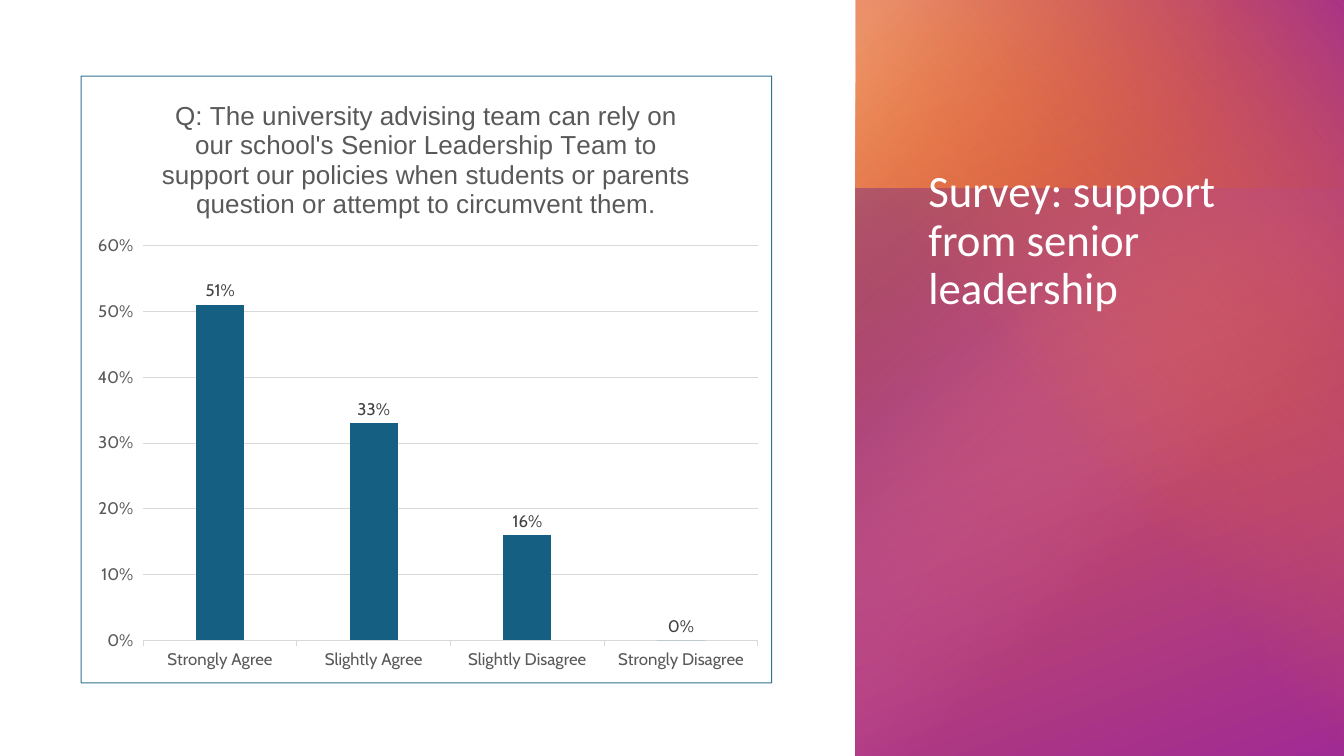
from dataclasses import dataclass

from lxml.etree import SubElement
from pptx import Presentation
from pptx.chart.data import CategoryChartData
from pptx.dml.color import RGBColor
from pptx.enum.chart import XL_CHART_TYPE as ChartType
from pptx.enum.chart import XL_LABEL_POSITION as LabelPosition
from pptx.enum.chart import XL_TICK_MARK as TickMark
from pptx.enum.shapes import MSO_SHAPE as Shape
from pptx.oxml import parse_xml
from pptx.oxml.ns import nsdecls, qn
from pptx.util import Inches, Pt


@dataclass(frozen=True)
class Theme:
    heading_font: str = "Calibri"
    question_font: str = "Arial"
    chart_font: str = "Cabin"
    heading_size: float = 32
    question_size: float = 18.6
    label_size: float = 12
    hairline: float = 0.75
    white: str = "FFFFFF"
    bar: str = "156082"
    grid: str = "D9D9D9"
    axis_text: str = "595959"
    value_text: str = "404040"
    orange: str = "E97132"
    peach: str = "F2AA84"
    purple: str = "A02B93"
    plum: str = "78206E"
    pink: str = "D86ECC"


def style_font(font, size, name, color):
    font.size, font.name, font.bold = Pt(size), name, False
    font.color.rgb = RGBColor.from_string(color)


def style_line(line, color, width):
    line.color.rgb = RGBColor.from_string(color)
    line.width = Pt(width)


def write(frame, text, *, size, font, color, spacing=None):
    paragraph = frame.paragraphs[0]
    paragraph.line_spacing = spacing
    run = paragraph.add_run()
    run.text = text
    style_font(run.font, size, font, color)


def gradient_xml(stops, angle):
    """Stops are (position, colour, opacity) in percent; no angle means radial."""
    marks = "".join(
        f'<a:gs pos="{position * 1000}"><a:srgbClr val="{color}">'
        f'<a:alpha val="{opacity * 1000}"/></a:srgbClr></a:gs>'
        for position, color, opacity in stops)
    if angle is None:
        course = ('<a:path path="circle"><a:fillToRect r="100000" b="100000"/>'
                  '</a:path>')
    else:
        course = f'<a:lin ang="{angle * 60000}" scaled="0"/>'
    return parse_xml(f'<a:gradFill {nsdecls("a")} rotWithShape="1">'
                     f'<a:gsLst>{marks}</a:gsLst>{course}</a:gradFill>')


class SurveySlide:
    """Places elements by boxes in percent of the slide's size."""

    def __init__(self, deck, theme):
        self.deck, self.theme = deck, theme
        self.slide = deck.slides.add_slide(deck.slide_layouts[6])

    def box(self, left, top, width, height):
        across, down = self.deck.slide_width / 100, self.deck.slide_height / 100
        return [round(share * unit) for share, unit in
                zip((left, top, width, height), (across, down, across, down))]

    def gradient(self, area, stops, angle=None, rotation=0):
        """Fill the visible area, swapping the sides for quarter turns."""
        left, top, width, height = self.box(*area)
        if rotation % 180 == 90:
            shift = (width - height) // 2
            left, top, width, height = left + shift, top - shift, height, width
        layer = self.slide.shapes.add_shape(Shape.RECTANGLE, left, top, width, height)
        layer.rotation = rotation
        layer.shadow.inherit = False
        layer.line.fill.background()
        layer.fill.background()
        properties = layer._element.spPr
        properties.replace(properties.find(qn("a:noFill")),
                           gradient_xml(stops, angle))

    def heading(self, area, text):
        theme = self.theme
        frame = self.slide.shapes.add_textbox(*self.box(*area)).text_frame
        frame.word_wrap = True
        write(frame, text, size=theme.heading_size, font=theme.heading_font,
              color=theme.white, spacing=0.9)

    def answers_chart(self, area, question, answers):
        theme = self.theme
        data = CategoryChartData(number_format="0%")
        data.categories = answers.keys()
        data.add_series("Series 1", answers.values())
        chart = self.slide.shapes.add_chart(
            ChartType.COLUMN_CLUSTERED, *self.box(*area), data).chart
        style_font(chart.font, theme.label_size, theme.chart_font, theme.axis_text)
        chart.has_legend = False
        chart.has_title = True
        write(chart.chart_title.text_frame, question, size=theme.question_size,
              font=theme.question_font, color=theme.axis_text)
        chart.chart_title.include_in_layout = False
        self.style_axes(chart)
        self.style_bars(chart.plots[0])
        self.place_plot(chart, x=0.09, y=0.28, w=0.89, h=0.65)
        self.frame_chart(chart)

    def style_axes(self, chart):
        theme = self.theme
        categories, shares = chart.category_axis, chart.value_axis
        for axis in (categories, shares):
            style_font(axis.tick_labels.font, theme.label_size,
                       theme.chart_font, theme.axis_text)
            axis.major_tick_mark = TickMark.OUTSIDE
        style_line(categories.format.line, theme.grid, theme.hairline)
        shares.format.line.fill.background()
        shares.minimum_scale, shares.maximum_scale, shares.major_unit = 0, 0.6, 0.1
        shares.tick_labels.number_format = "0%"
        shares.tick_labels.number_format_is_linked = False
        style_line(shares.major_gridlines.format.line, theme.grid, theme.hairline)

    def style_bars(self, plot):
        theme = self.theme
        plot.gap_width, plot.overlap, plot.vary_by_categories = 219, -27, False
        bars = plot.series[0]
        bars.format.fill.solid()
        bars.format.fill.fore_color.rgb = RGBColor.from_string(theme.bar)
        labels = bars.data_labels
        labels.show_value = True
        labels.position = LabelPosition.OUTSIDE_END
        labels.number_format, labels.number_format_is_linked = "0%", False
        style_font(labels.font, theme.label_size, theme.chart_font, theme.value_text)

    def place_plot(self, chart, **shares):
        """Fix the inner plot area in shares of the chart."""
        plot_area = chart._chartSpace.chart.plotArea
        for old in plot_area.findall(qn("c:layout")):
            plot_area.remove(old)
        settings = {"layoutTarget": "inner", "xMode": "edge", "yMode": "edge", **shares}
        marks = "".join(f'<c:{key} val="{value}"/>' for key, value in settings.items())
        plot_area.insert(0, parse_xml(
            f'<c:layout {nsdecls("c")}><c:manualLayout>{marks}'
            '</c:manualLayout></c:layout>'))

    def frame_chart(self, chart):
        theme = self.theme
        border = parse_xml(
            f'<c:spPr {nsdecls("c", "a")}><a:noFill/>'
            f'<a:ln w="{Pt(theme.hairline)}"><a:solidFill/></a:ln></c:spPr>')
        color = SubElement(border.find(".//" + qn("a:solidFill")),
                           qn("a:srgbClr"), val=theme.bar)
        SubElement(color, qn("a:alpha"), val="87000")
        chart._chartSpace.chart.addnext(border)


def main():
    deck = Presentation()
    deck.slide_width, deck.slide_height = Inches(13.33), Inches(7.5)
    theme = Theme()
    survey = SurveySlide(deck, theme)

    panel_left, panel_width = 63.67, 36.33
    panel = (panel_left, 0, panel_width, 100)
    survey.gradient(panel, [(7, theme.orange, 100), (100, theme.purple, 100)], 70)
    survey.gradient((panel_left, 25, panel_width, 75),
                    [(0, theme.plum, 100), (60, theme.pink, 0)], rotation=180)
    survey.gradient((panel_left, 0, 26.8, 100),
                    [(3, theme.peach, 78), (42, theme.orange, 0)], 50)
    survey.gradient(panel, [(0, theme.purple, 86), (57, theme.orange, 0)],
                    230, rotation=270)

    survey.heading((68.34, 21.7, 27.16, 43.6), "Survey: support from senior leadership")
    survey.answers_chart(
        (6, 10, 51.46, 80.4),
        "Q: The university advising team can rely on our school's Senior Leadership "
        "Team to support our policies when students or parents question or attempt "
        "to circumvent them.",
        {"Strongly Agree": 0.51, "Slightly Agree": 0.33,
         "Slightly Disagree": 0.16, "Strongly Disagree": 0})
    deck.save("out.pptx")


if __name__ == "__main__":
    main()
